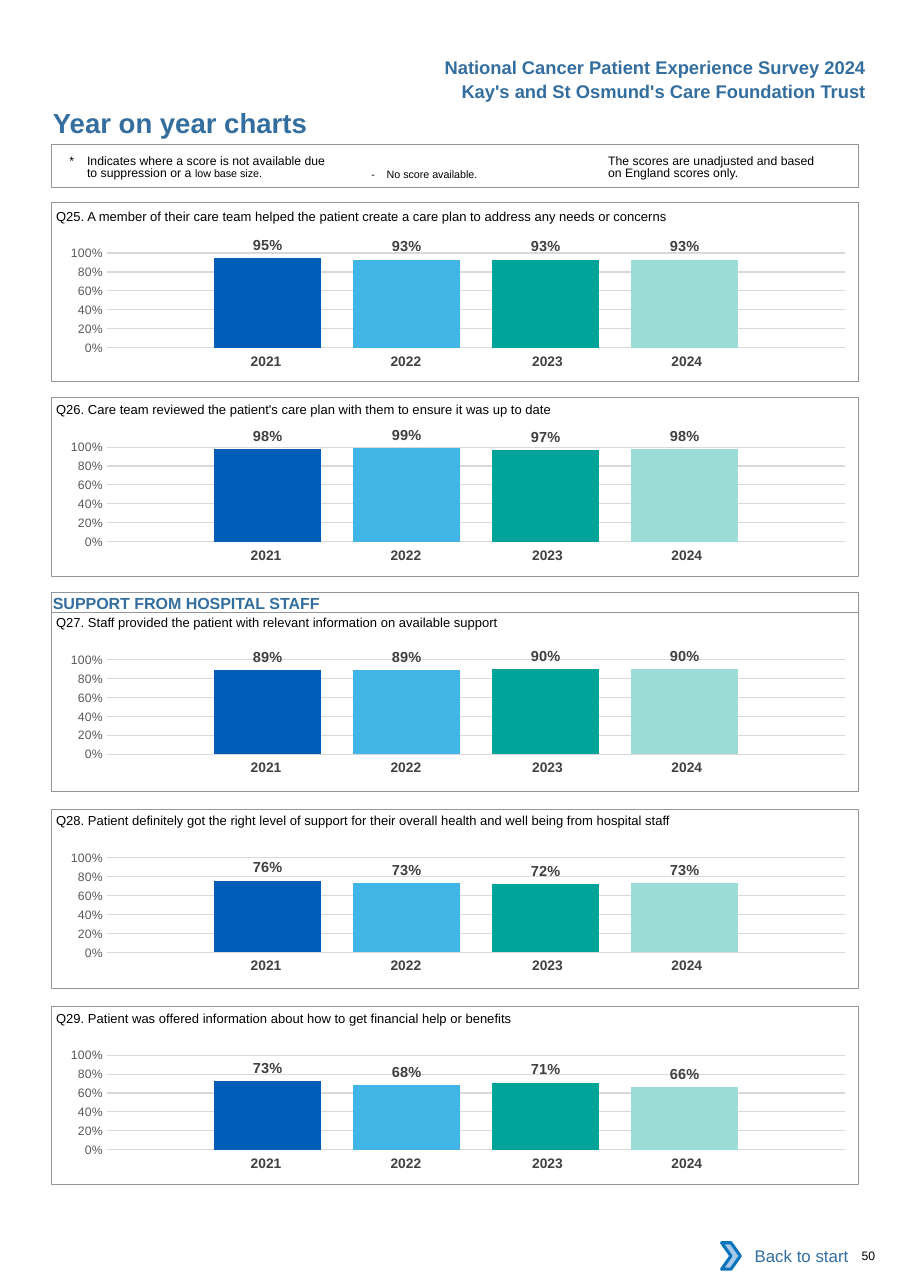
from lxml import etree
from pptx import Presentation
from pptx import util as u
from pptx.chart import data as cd
from pptx.dml import color as dc
from pptx.enum import chart as ec
from pptx.enum import shapes as es
from pptx.enum import text as et
from pptx.oxml import ns

BLACK = dc.RGBColor(0, 0, 0)
WHITE = dc.RGBColor(255, 255, 255)
BLUE = dc.RGBColor(0x33, 0x6E, 0x9F)
GREY = dc.RGBColor(0x93, 0x95, 0x98)
GRID = dc.RGBColor(0xD9, 0xD9, 0xD9)
TICK = dc.RGBColor(0x59, 0x59, 0x59)
LABEL = dc.RGBColor(0x40, 0x40, 0x40)
YEAR = dc.RGBColor(0x41, 0x40, 0x42)
SKY = dc.RGBColor(0xA8, 0xC7, 0xE9)
EDGE = dc.RGBColor(0x0A, 0x74, 0xBB)
BARS = [dc.RGBColor(0x00, 0x5E, 0xB8), dc.RGBColor(0x41, 0xB6, 0xE6),
        dc.RGBColor(0x00, 0xA4, 0x99), dc.RGBColor(0x9C, 0xDC, 0xD7)]
YEARS = ["2021", "2022", "2023", "2024"]
LEFT, RIGHT = et.PP_ALIGN.LEFT, et.PP_ALIGN.RIGHT
PLAIN = "{2D5ABB26-0587-4C30-8999-92F81FD0307C}"

deck = Presentation()
deck.slide_width, deck.slide_height = u.Inches(8.26), u.Inches(11.69)
slide = deck.slides.add_slide(deck.slide_layouts[5])
items = slide.shapes


def area(x, y, wide, high):
    """Turn percentages of the slide into a position and size."""
    across, down = deck.slide_width / 100, deck.slide_height / 100
    return [round(x * across), round(y * down), round(wide * across), round(high * down)]


def write(shape, words, size, color=BLACK, bold=False, align=LEFT, pad=0, inset=0):
    frame = shape.text_frame
    frame.word_wrap = True
    frame.auto_size = et.MSO_AUTO_SIZE.NONE
    frame.vertical_anchor = et.MSO_ANCHOR.TOP
    frame.margin_left = frame.margin_right = u.Inches(inset)
    frame.margin_top, frame.margin_bottom = u.Inches(pad), 0
    frame.text = words
    par = frame.paragraphs[0]
    par.alignment = align
    par.font.name, par.font.size = "Arial", u.Pt(size)
    par.font.bold, par.font.color.rgb = bold, color
    return par


# Title
title = items.title
title.left, title.top, title.width, title.height = area(5.81, 8.21, 54.48, 2.57)
write(title, "Year on year charts", 18, BLUE, True)

# Questions: text, text top, panel top, chart top, scores
QUESTIONS = [
    ("Q25. A member of their care team helped the patient create a care plan "
     "to address any needs or concerns", 15.4, 15.74, 18.05, [0.95, 0.93, 0.93, 0.93]),
    ("Q26. Care team reviewed the patient's care plan with them to ensure it "
     "was up to date", 30.37, 30.88, 33.11, [0.98, 0.99, 0.97, 0.98]),
    ("Q27. Staff provided the patient with relevant information on available "
     "support", 46.96, 47.56, 49.62, [0.89, 0.89, 0.9, 0.9]),
    ("Q28. Patient definitely got the right level of support for their overall "
     "health and well being from hospital staff", 62.28, 62.87, 65.01, [0.76, 0.73, 0.72, 0.73]),
    ("Q29. Patient was offered information about how to get financial help or "
     "benefits", 77.67, 78.1, 80.33, [0.73, 0.68, 0.71, 0.66]),
]

for words, head, top, plot, scores in QUESTIONS:
    # Bar chart
    data = cd.CategoryChartData(number_format="0%")
    data.categories = ["1"]
    for index, score in enumerate(scores, 1):
        data.add_series(f"Series {index}", [score])
    chart = items.add_chart(ec.XL_CHART_TYPE.COLUMN_CLUSTERED,
                            *area(4.72, plot, 88.62, 11.04), data).chart
    chart.has_legend = chart.has_title = False
    chart.font.name, chart.font.size = "Calibri", u.Pt(10)
    chart.category_axis.visible = False
    axis = chart.value_axis
    axis.minimum_scale, axis.maximum_scale, axis.major_unit = 0, 1, 0.2
    axis.major_tick_mark = ec.XL_TICK_MARK.NONE
    axis.format.line.fill.background()
    axis.major_gridlines.format.line.color.rgb = GRID
    axis.major_gridlines.format.line.width = u.Pt(0.75)
    ticks = axis.tick_labels
    ticks.number_format, ticks.number_format_is_linked = "0%", False
    ticks.font.name, ticks.font.size, ticks.font.color.rgb = "Arial", u.Pt(8), TICK
    bars = chart.plots[0]
    bars.gap_width, bars.overlap, bars.vary_by_categories = 200, -30, False
    for series, color in zip(bars.series, BARS):
        series.format.fill.solid()
        series.format.fill.fore_color.rgb = color
        label = series.data_labels
        label.show_value, label.position = True, ec.XL_LABEL_POSITION.OUTSIDE_END
        label.number_format, label.number_format_is_linked = "0%", False
        label.font.name, label.font.size = "Arial", u.Pt(9.5)
        label.font.bold, label.font.color.rgb = True, LABEL

    # Fixed inner plot area
    region = chart.plots[0]._element.getparent()
    for old in region.findall(ns.qn("c:layout")):
        region.remove(old)
    layout = etree.Element(ns.qn("c:layout"))
    manual = etree.SubElement(layout, ns.qn("c:manualLayout"))
    for tag, value in [("layoutTarget", "inner"), ("xMode", "edge"), ("yMode", "edge"),
                       ("x", "0.08"), ("y", "0.145"), ("w", "0.915"), ("h", "0.666")]:
        etree.SubElement(manual, ns.qn(f"c:{tag}")).set("val", value)
    region.insert(0, layout)

    # Year labels
    table = items.add_table(1, 4, *area(20.94, plot + 8.98, 62.35, 2.31)).table
    table.first_row = table.horz_banding = False
    table._tbl.tblPr.find(ns.qn("a:tableStyleId")).text = PLAIN
    for index, (year, wide, inset) in enumerate(
            zip(YEARS, [1.27, 1.27, 1.34, 1.27], [0, 0, 0.04, 0.12])):
        table.columns[index].width = u.Inches(wide)
        cell = table.cell(0, index)
        cell.fill.background()
        cell.margin_right = u.Inches(inset)
        cell.text = year
        par = cell.text_frame.paragraphs[0]
        par.alignment = et.PP_ALIGN.CENTER
        par.font.name, par.font.size = "Arial", u.Pt(9)
        par.font.bold, par.font.color.rgb = True, YEAR

    # Question text
    write(items.add_textbox(*area(6.17, head, 82.3, 2.05)), words, 8.5, pad=0.09)

# Frames: panels, section heading, key
frames = [(row[2], 13.86, 0.5) for row in QUESTIONS]
for top, high, line in frames + [(46.02, 1.54, 0.5), (11.21, 3.34, 0.75)]:
    frame = items.add_shape(es.MSO_SHAPE.RECTANGLE, *area(5.69, top, 88.62, high))
    frame.shadow.inherit = False
    frame.fill.background()
    frame.line.color.rgb, frame.line.width = GREY, u.Pt(line)
    if top == 46.02:
        write(frame, "SUPPORT FROM HOSPITAL STAFF", 10.5, BLUE, True, pad=0.01, inset=0.01)

# Key notes
star = write(items.add_textbox(*area(7.63, 11.8, 28.45, 2.31)),
             "*\tIndicates where a score is not available due to suppression or a ",
             8, pad=0.03)
tail = star.add_run()
tail.text, tail.font.size = "low base size.", u.Pt(7)
dash = write(items.add_textbox(*area(40.8, 13, 22.15, 2.05)), "-\tNo score available.", 7)
for par, hang in [(star, 0.16), (dash, 0.14)]:
    props = par._p.get_or_add_pPr()
    props.set("marL", str(u.Inches(hang)))
    props.set("indent", str(-u.Inches(hang)))
basis = write(items.add_textbox(*area(66.83, 11.8, 24.33, 2.31)),
              "The scores are unadjusted and based on England scores only.", 8, pad=0.03)
star.line_spacing = basis.line_spacing = u.Pt(8.1)

# Page header and number
for top, words in [(3.93, "National Cancer Patient Experience Survey 2024"),
                   (5.82, "Kay's and St Osmund's Care Foundation Trust")]:
    write(items.add_textbox(*area(42.37, top, 54, 2.57)), words, 12, BLUE, True,
          RIGHT, 0.05, 0.1)
write(items.add_textbox(*area(94.67, 96.92, 4.84, 1.11)), "50", 8)

# Back to start
back = items.add_shape(es.MSO_SHAPE.RECTANGLE, *area(80.15, 95.72, 14.29, 3.59))
arrow = items.add_shape(es.MSO_SHAPE.CHEVRON, *area(79.3, 96.49, 2.06, 2.05))
for shape, color in [(back, WHITE), (arrow, SKY)]:
    shape.shadow.inherit = False
    shape.fill.solid()
    shape.fill.fore_color.rgb = color
back.line.fill.background()
arrow.line.color.rgb, arrow.line.width = EDGE, u.Pt(2)
write(back, "Back to start", 11, BLUE, align=RIGHT, inset=0.1)
back.text_frame.vertical_anchor = et.MSO_ANCHOR.MIDDLE

deck.save("out.pptx")
